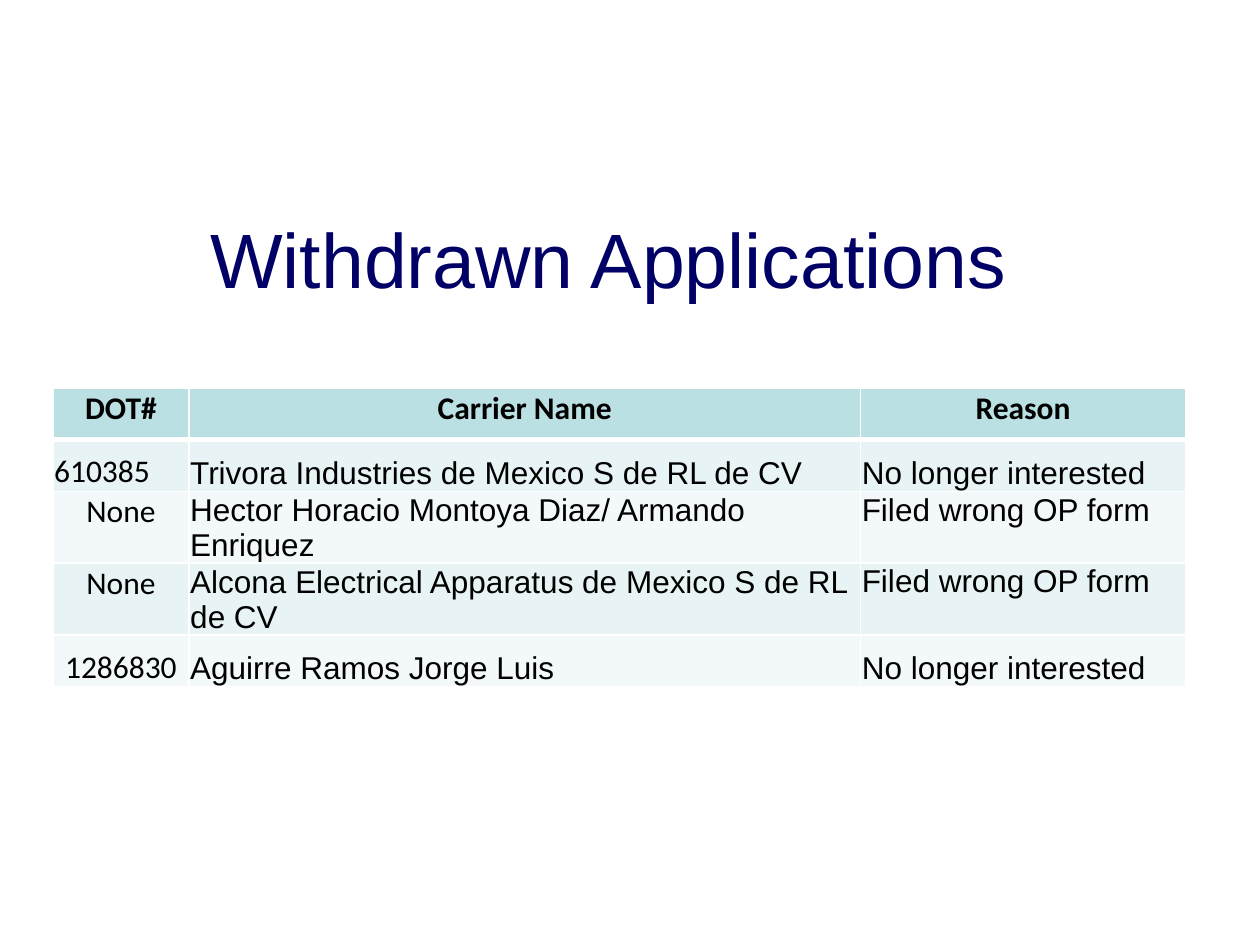
"""Build the Withdrawn Applications slide with its table of carriers."""
from typing import NamedTuple

from lxml.etree import SubElement
from pptx import Presentation
from pptx.dml.color import RGBColor
from pptx.enum.text import MSO_ANCHOR as Anchor, PP_ALIGN as Align
from pptx.oxml.ns import qn
from pptx.util import Inches, Pt

COLUMN_WIDTHS = (1.08, 5.33, 2.58)
ROW_HEIGHT = 0.41
HEADINGS = ("DOT#", "Carrier Name", "Reason")
HEADER_FILL = "BBE0E3"
BAND_FILLS = ("E7F3F4", "F3F9FA")


class Application(NamedTuple):
    number: str
    carrier: str
    reason: str
    number_align: Align = Align.CENTER
    outer_anchor: Anchor = Anchor.TOP


APPLICATIONS = (
    Application("610385", "Trivora Industries de Mexico S de RL de CV",
                "No longer interested", Align.LEFT, Anchor.BOTTOM),
    Application("None", "Hector Horacio Montoya Diaz/ Armando Enriquez", "Filed wrong OP form"),
    Application("None", "Alcona Electrical Apparatus de Mexico S de RL de CV", "Filed wrong OP form"),
    Application("1286830", "Aguirre Ramos Jorge Luis", "No longer interested",
                outer_anchor=Anchor.BOTTOM),
)


def color(value: str) -> RGBColor:
    return RGBColor.from_string(value)


def write(frame, text: str, *, font="Arial", size=18, fill="000000", bold=False, align=Align.LEFT) -> None:
    paragraph = frame.paragraphs[0]
    paragraph.alignment = align
    run = paragraph.add_run()
    run.text = text
    run.font.name = font
    run.font.size = Pt(size)
    run.font.bold = bold
    run.font.color.rgb = color(fill)


def add_border(cell, side: str, width: float) -> None:
    properties = cell._tc.get_or_add_tcPr()
    line = SubElement(properties, qn(f"a:ln{side}"), w=str(Pt(width)))
    SubElement(SubElement(line, qn("a:solidFill")), qn("a:srgbClr"), val="FFFFFF")


def format_cell(cell, text: str, fill: str, *, anchor=Anchor.TOP, top=1, bottom=1, **text_format) -> None:
    cell.margin_left = cell.margin_right = cell.margin_top = Inches(0.01)
    cell.margin_bottom = Inches(0)
    cell.vertical_anchor = anchor
    for side, width in (("L", 1), ("R", 1), ("T", top), ("B", bottom)):
        add_border(cell, side, width)
    cell.fill.solid()
    cell.fill.fore_color.rgb = color(fill)
    write(cell.text_frame, text, **text_format)


def add_title(slide, text: str) -> None:
    title = slide.shapes.title
    title.left, title.top, title.width, title.height = map(Inches, (0.33, 1.42, 9, 1.25))
    title.text_frame.vertical_anchor = Anchor.MIDDLE
    write(title.text_frame, text, size=44, fill="000066", align=Align.CENTER)


def add_application_table(slide) -> None:
    row_count = len(APPLICATIONS) + 1
    table = slide.shapes.add_table(
        row_count, len(HEADINGS), Inches(0.42), Inches(3.08),
        Inches(sum(COLUMN_WIDTHS)), Inches(ROW_HEIGHT * row_count)).table
    for column, width in zip(table.columns, COLUMN_WIDTHS):
        column.width = Inches(width)
    for row in table.rows:
        row.height = Inches(ROW_HEIGHT)
    for index, heading in enumerate(HEADINGS):
        format_cell(table.cell(0, index), heading, HEADER_FILL, bottom=3,
                    font="Calibri", bold=True, align=Align.CENTER)
    for index, application in enumerate(APPLICATIONS, start=1):
        fill = BAND_FILLS[(index - 1) % 2]
        top = 3 if index == 1 else 1
        format_cell(table.cell(index, 0), application.number, fill, top=top, font="Calibri",
                    anchor=application.outer_anchor, align=application.number_align)
        format_cell(table.cell(index, 1), application.carrier, fill, top=top, anchor=Anchor.BOTTOM)
        format_cell(table.cell(index, 2), application.reason, fill, top=top,
                    anchor=application.outer_anchor)


def main() -> None:
    presentation = Presentation()
    presentation.slide_width = Inches(10)
    presentation.slide_height = Inches(7.5)
    slide = presentation.slides.add_slide(presentation.slide_layouts[5])
    add_title(slide, "Withdrawn Applications")
    add_application_table(slide)
    presentation.save("out.pptx")


if __name__ == "__main__":
    main()
